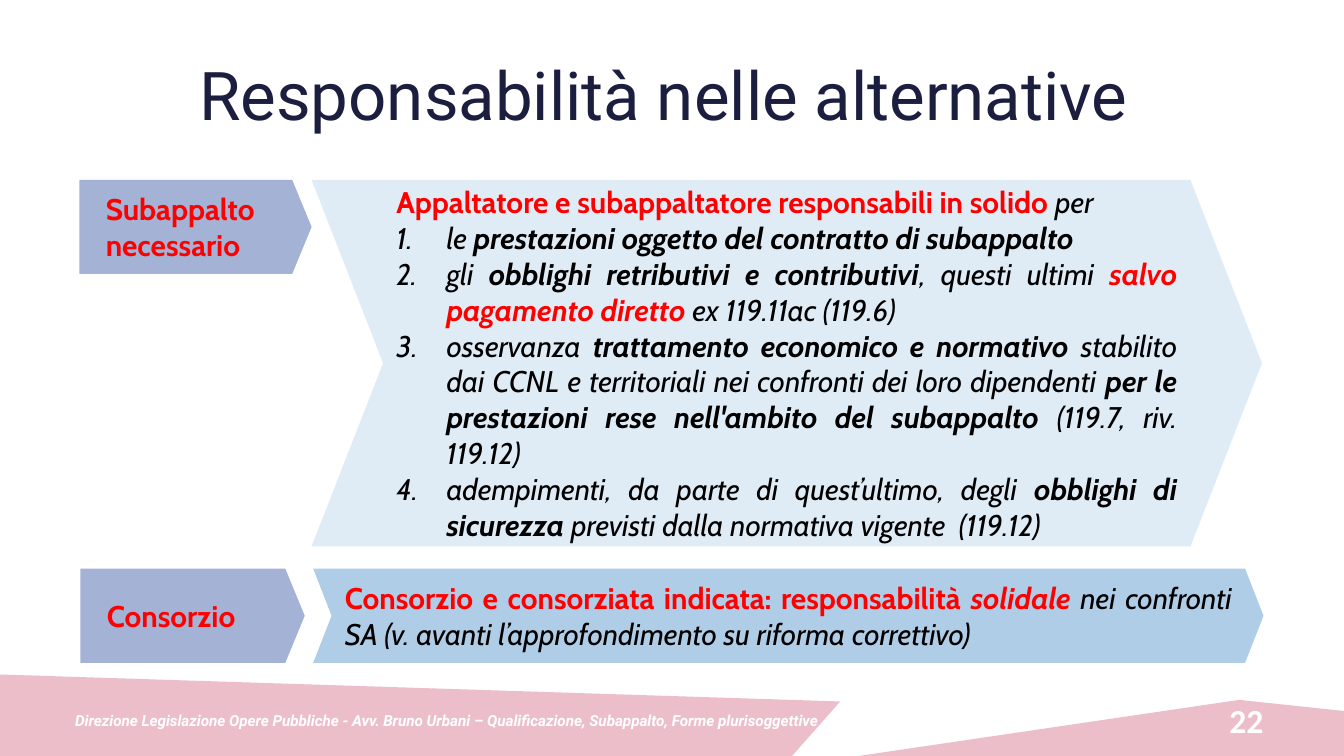
from dataclasses import dataclass

from lxml.etree import SubElement
from pptx import Presentation
from pptx.dml.color import RGBColor
from pptx.enum.shapes import MSO_SHAPE as Shape
from pptx.enum.text import MSO_ANCHOR as Anchor, PP_ALIGN as Align
from pptx.oxml.ns import qn
from pptx.util import Cm, Pt


@dataclass(frozen=True)
class Theme:
    heading_font: str = "Roboto"
    body_font: str = "Cabin"
    number_font: str = "Calibri"
    title_size: float = 36
    number_size: float = 18
    body_size: float = 16
    footer_size: float = 8.2
    navy: str = "1B1E3E"
    red: str = "FF0000"
    black: str = "000000"
    white: str = "FFFFFF"
    pink: str = "EBB7C5"
    indigo: str = "4A66AC"
    pale_blue: str = "C0D8ED"
    sky_blue: str = "629DD1"


class SlideBuilder:
    """Draws styled elements on the current slide."""

    def __init__(self, slide, theme):
        self.slide = slide
        self.theme = theme

    def fill(self, shape, color, opacity):
        shape.shadow.inherit = False
        shape.line.fill.background()
        shape.fill.solid()
        shape.fill.fore_color.rgb = RGBColor.from_string(color)
        color_element = shape._element.spPr.find(qn("a:solidFill"))[0]
        SubElement(color_element, qn("a:alpha"), val=str(opacity * 1000))

    def font(self, font, name, size, color=None, bold=None, italic=None):
        font.name, font.size = name, Pt(size)
        font.bold, font.italic = bold, italic
        if color:
            font.color.rgb = RGBColor.from_string(color)

    def title(self, text, left, top, width, height):
        title = self.slide.shapes.title
        title.left, title.top = Cm(left), Cm(top)
        title.width, title.height = Cm(width), Cm(height)
        title.text_frame.vertical_anchor = Anchor.MIDDLE
        paragraph = title.text_frame.paragraphs[0]
        paragraph.text = text
        paragraph.alignment = Align.CENTER
        self.font(paragraph.font, self.theme.heading_font, self.theme.title_size, self.theme.navy)

    def band(self, points):
        start, *others = [(Cm(x), Cm(y)) for x, y in points]
        builder = self.slide.shapes.build_freeform(*start)
        builder.add_line_segments(others, close=True)
        self.fill(builder.convert_to_shape(), self.theme.pink, 90)

    def arrow(self, kind, adjustment, box, color):
        shape = self.slide.shapes.add_shape(kind, *map(Cm, box))
        shape.adjustments[0] = adjustment
        self.fill(shape, color, 50)
        shape.text_frame.word_wrap = True
        shape.text_frame.vertical_anchor = Anchor.MIDDLE
        return shape.text_frame

    def label(self, text, box):
        frame = self.arrow(Shape.PENTAGON, 0.206, box, self.theme.indigo)
        paragraph = frame.paragraphs[0]
        paragraph.text = text
        paragraph.alignment = Align.LEFT
        paragraph._p.get_or_add_pPr().set("marL", str(Cm(0.25)))
        self.font(paragraph.font, self.theme.body_font, self.theme.body_size, self.theme.red, True)

    def detail(self, box, color, heading, items=()):
        frame = self.arrow(Shape.CHEVRON, 0.195, box, color)
        self.rich_paragraph(frame.paragraphs[0], heading)
        for item in items:
            self.rich_paragraph(frame.add_paragraph(), item, numbered=True)

    def rich_paragraph(self, paragraph, runs, numbered=False):
        """Fill a justified paragraph from (text, flags) pairs; flags are r(ed), b(old), i(talic)."""
        paragraph.alignment = Align.JUSTIFY
        if numbered:
            properties = paragraph._p.get_or_add_pPr()
            properties.set("marL", str(Cm(0.95)))
            properties.set("indent", str(-Cm(0.95)))
            SubElement(properties, qn("a:buFont"), typeface="+mj-lt")
            SubElement(properties, qn("a:buAutoNum"), type="arabicPeriod")
        self.font(paragraph.font, self.theme.body_font, self.theme.body_size)
        for text, flags in runs:
            run = paragraph.add_run()
            run.text = text
            color = self.theme.red if "r" in flags else self.theme.black
            run.font.color.rgb = RGBColor.from_string(color)
            run.font.bold, run.font.italic = "b" in flags, "i" in flags

    def caption(self, text, box, alignment, name, size, italic=False, margins=(0.25, 0.13)):
        frame = self.slide.shapes.add_textbox(*map(Cm, box)).text_frame
        frame.word_wrap = True
        frame.vertical_anchor = Anchor.MIDDLE
        frame.margin_left = frame.margin_right = Cm(margins[0])
        frame.margin_top = frame.margin_bottom = Cm(margins[1])
        paragraph = frame.paragraphs[0]
        paragraph.text = text
        paragraph.alignment = alignment
        self.font(paragraph.font, name, size, self.theme.white, True, italic)


SUBCONTRACT_HEADING = [("Appaltatore e subappaltatore responsabili in solido ", "rb"), ("per ", "i")]
SUBCONTRACT_DUTIES = [
    [("le ", "i"), ("prestazioni oggetto del contratto di subappalto ", "bi")],
    [
        ("gli ", "i"),
        ("obblighi retributivi e contributivi", "bi"),
        (", questi ultimi ", "i"),
        ("salvo pagamento diretto", "rbi"),
        (" ex 119.11ac (119.6)", "i"),
    ],
    [
        ("osservanza ", "i"),
        ("trattamento economico e normativo ", "bi"),
        ("stabilito dai CCNL e territoriali nei confronti dei loro dipendenti ", "i"),
        ("per le prestazioni rese nell'ambito del subappalto ", "bi"),
        ("(119.7, riv. 119.12) ", "i"),
    ],
    [
        ("adempimenti, da parte di quest’ultimo, degli ", "i"),
        ("obblighi di sicurezza ", "bi"),
        ("previsti dalla normativa vigente  (119.12)", "i"),
    ],
]
CONSORTIUM_HEADING = [
    ("Consorzio e consorziata indicata: responsabilità ", "rb"),
    ("solidale ", "rbi"),
    ("nei confronti SA (v. avanti l’approfondimento su riforma correttivo)", "i"),
]
FOOTER = (
    "Direzione Legislazione Opere Pubbliche - Avv. Bruno Urbani – "
    "Qualificazione, Subappalto, Forme plurisoggettive"
)


def main():
    presentation = Presentation()
    presentation.slide_width, presentation.slide_height = Cm(25.4), Cm(14.29)
    theme = Theme()
    slide = presentation.slides.add_slide(presentation.slide_layouts[5])
    builder = SlideBuilder(slide, theme)

    builder.band([(16.23, 14.29), (25.4, 14.29), (25.4, 13.44), (23.42, 13.23)])
    builder.band([(0, 12.75), (0, 14.29), (14.97, 14.29), (15.88, 13.26)])
    builder.title("Responsabilità nelle alternative ", 1.27, 0.58, 22.86, 2.39)

    builder.label("Subappalto necessario", (1.5, 3.4, 4.39, 1.78))
    builder.detail((5.89, 3.4, 17.96, 6.93), theme.pale_blue, SUBCONTRACT_HEADING, SUBCONTRACT_DUTIES)
    builder.label("Consorzio", (1.52, 10.75, 4.24, 1.78))
    builder.detail((5.92, 10.75, 17.96, 1.78), theme.sky_blue, CONSORTIUM_HEADING)

    builder.caption("22", (18.21, 13.23, 5.92, 0.76), Align.RIGHT, theme.number_font, theme.number_size)
    builder.caption(FOOTER, (1.24, 13.23, 15.24, 0.76), Align.LEFT, theme.heading_font,
                    theme.footer_size, italic=True, margins=(0.18, 0.1))
    presentation.save("out.pptx")


if __name__ == "__main__":
    main()
